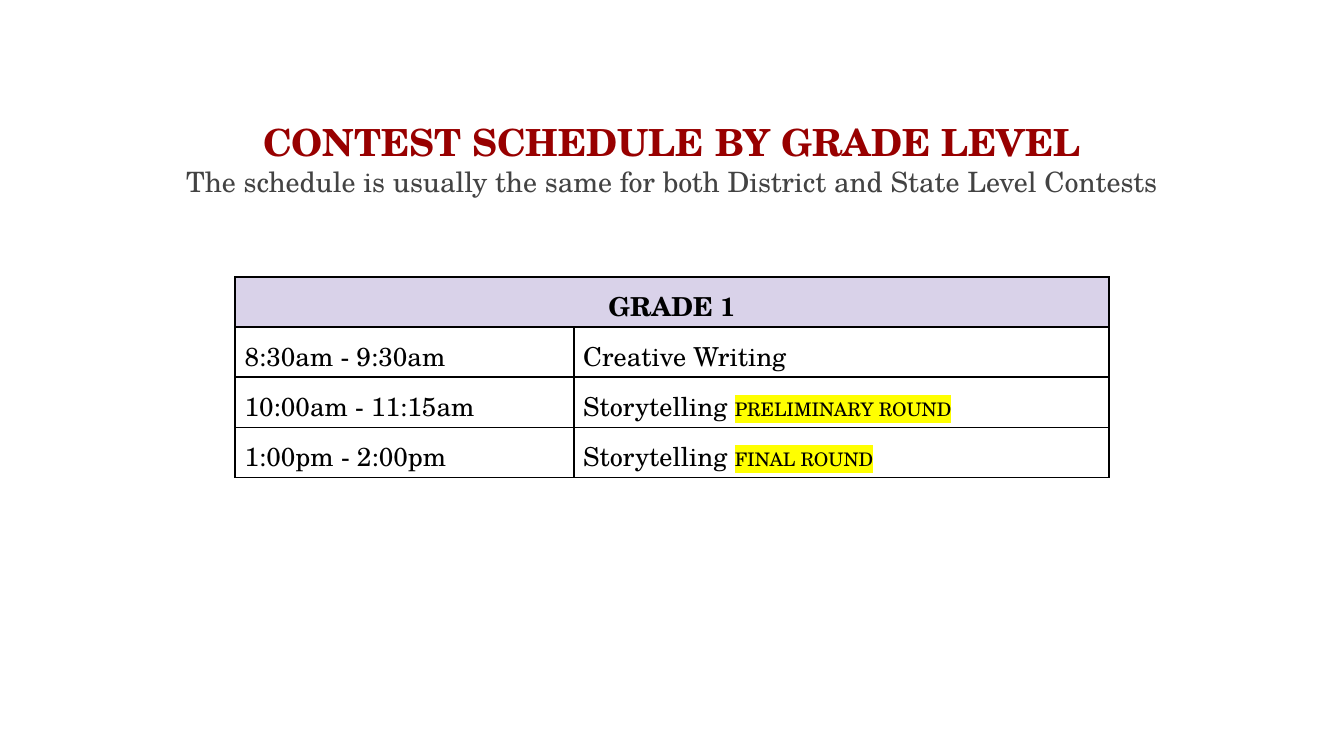
from lxml import etree
from pptx import Presentation
from pptx.dml.color import RGBColor
from pptx.enum.text import MSO_ANCHOR, PP_ALIGN
from pptx.oxml.ns import qn
from pptx.util import Inches, Pt

CENTER, LEFT = PP_ALIGN.CENTER, PP_ALIGN.LEFT
TOP = MSO_ANCHOR.TOP
FONT = "TeX Gyre Schola"
COLORS = {
    "title": "980000",
    "subtitle": "434343",
    "text": "000000",
    "border": "000000",
    "header": "D9D2E9",
    "highlight": "FFFF00",
}


def add_solid_fill(parent, tag, color):
    """Append a DrawingML colour element with the given tag."""
    element = etree.SubElement(parent, qn(tag))
    etree.SubElement(element, qn("a:srgbClr"), val=COLORS[color])
    return element


def add_text(paragraph, text, size=14, color="text", bold=False, highlight=None):
    """Add one formatted run to a paragraph."""
    run = paragraph.add_run()
    run.text = text
    font = run.font
    font.size, font.bold, font.name = Pt(size), bold, FONT
    font.color.rgb = RGBColor.from_string(COLORS[color])
    if highlight:
        properties = run._r.get_or_add_rPr()
        marker = add_solid_fill(properties, "a:highlight", highlight)
        properties.find(qn("a:solidFill")).addnext(marker)


class ScheduleSlide:
    """Style and element methods for the current slide."""

    title_margin = Inches(0.1)
    cell_margin = Inches(0.07)
    border_width = Pt(1)

    def __init__(self, presentation):
        self.slide = presentation.slides.add_slide(presentation.slide_layouts[6])

    def set_margins(self, target, margin):
        target.margin_left = target.margin_right = margin
        target.margin_top = target.margin_bottom = margin

    def add_heading(self, left, top, width, height, lines):
        shape = self.slide.shapes.add_textbox(
            Inches(left), Inches(top), Inches(width), Inches(height))
        frame = shape.text_frame
        frame.word_wrap = True
        frame.vertical_anchor = TOP
        self.set_margins(frame, self.title_margin)
        for index, (text, style) in enumerate(lines):
            paragraph = frame.add_paragraph() if index else frame.paragraphs[0]
            paragraph.alignment = CENTER
            add_text(paragraph, text, **style)

    def style_cell(self, cell, fill=None):
        self.set_margins(cell, self.cell_margin)
        cell.vertical_anchor = TOP
        properties = cell._tc.get_or_add_tcPr()
        for side in ("L", "R", "T", "B"):
            line = etree.SubElement(
                properties, qn(f"a:ln{side}"), w=str(self.border_width))
            add_solid_fill(line, "a:solidFill", "border")
        if fill:
            cell.fill.solid()
            cell.fill.fore_color.rgb = RGBColor.from_string(COLORS[fill])
        else:
            cell.fill.background()

    def fill_cell(self, cell, runs, alignment=LEFT):
        paragraph = cell.text_frame.paragraphs[0]
        paragraph.alignment = alignment
        for text, style in runs:
            add_text(paragraph, text, **style)

    def add_schedule(self, left, top, widths, row_height, header, rows):
        row_count = len(rows) + 1
        table = self.slide.shapes.add_table(
            row_count, len(widths), Inches(left), Inches(top),
            Inches(sum(widths)), Inches(row_height * row_count)).table
        table.first_row = table.horz_banding = False
        for column, width in zip(table.columns, widths):
            column.width = Inches(width)
        for index, row in enumerate(table.rows):
            row.height = Inches(row_height)
            for cell in row.cells:
                self.style_cell(cell, None if index else "header")

        # Header across all columns
        table.cell(0, 0).merge(table.cell(0, len(widths) - 1))
        self.fill_cell(table.cell(0, 0), [(header, {"bold": True})], CENTER)

        # Time, event and optional highlighted round
        for index, (time, event, stage) in enumerate(rows, start=1):
            self.fill_cell(table.cell(index, 0), [(time, {})])
            runs = [(event, {})]
            if stage:
                runs = [(event + " ", {}),
                        (stage, {"size": 10, "highlight": "highlight"})]
            self.fill_cell(table.cell(index, 1), runs)


def main():
    # Widescreen slide, 16:9
    presentation = Presentation()
    presentation.slide_width = Inches(10)
    presentation.slide_height = presentation.slide_width * 9 // 16
    schedule = ScheduleSlide(presentation)

    # Title and subtitle
    schedule.add_heading(0.34, 0.79, 9.32, 0.79, [
        ("CONTEST SCHEDULE BY GRADE LEVEL",
         {"size": 20, "color": "title", "bold": True}),
        ("The schedule is usually the same for both District and State Level Contests",
         {"size": 15, "color": "subtitle"}),
    ])

    # Schedule table
    schedule.add_schedule(1.75, 2.06, [2.52, 3.98], 0.37, "GRADE 1", [
        ("8:30am - 9:30am", "Creative Writing", None),
        ("10:00am - 11:15am", "Storytelling", "PRELIMINARY ROUND"),
        ("1:00pm - 2:00pm", "Storytelling", "FINAL ROUND"),
    ])
    presentation.save("out.pptx")


if __name__ == "__main__":
    main()
